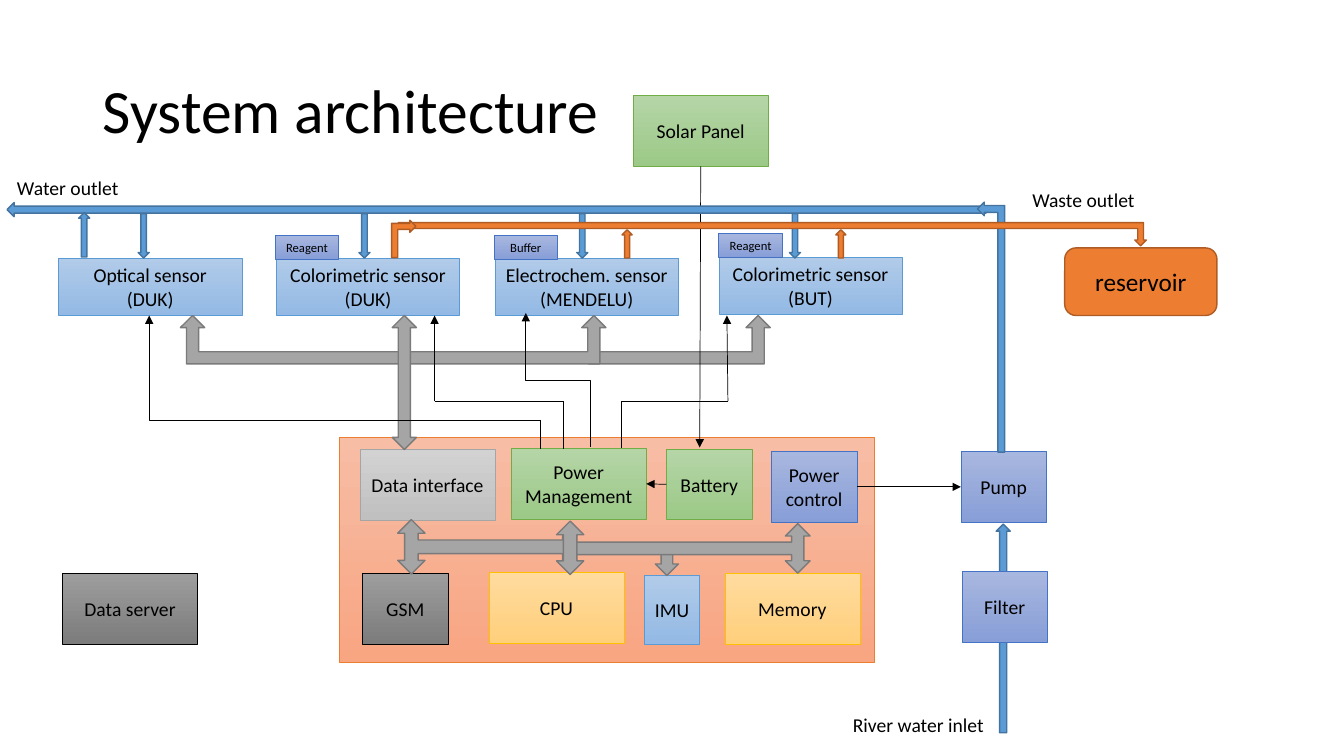
from dataclasses import dataclass

from lxml import etree
from pptx import Presentation
from pptx.dml.color import RGBColor
from pptx.enum.shapes import MSO_CONNECTOR, MSO_SHAPE
from pptx.enum.text import MSO_ANCHOR, PP_ALIGN
from pptx.oxml.ns import qn
from pptx.util import Inches, Pt

RECT, ROUNDED = MSO_SHAPE.RECTANGLE, MSO_SHAPE.ROUNDED_RECTANGLE
UP, DOWN, RIGHT = MSO_SHAPE.UP_ARROW, MSO_SHAPE.DOWN_ARROW, MSO_SHAPE.RIGHT_ARROW
UP_DOWN, BENT_UP = MSO_SHAPE.UP_DOWN_ARROW, MSO_SHAPE.BENT_UP_ARROW
THREE_WAY = MSO_SHAPE.LEFT_RIGHT_UP_ARROW
STRAIGHT, ELBOW = MSO_CONNECTOR.STRAIGHT, MSO_CONNECTOR.ELBOW
LEFT, CENTER = PP_ALIGN.LEFT, PP_ALIGN.CENTER
TOP, MIDDLE = MSO_ANCHOR.TOP, MSO_ANCHOR.MIDDLE
SIDE_LEFT, SIDE_BOTTOM, SIDE_RIGHT = 1, 2, 3
FONT, BLACK = "Calibri", "000000"


@dataclass
class Style:
    fill: str
    line: str
    fill_end: str = ""
    line_width: float = 0.5


@dataclass
class Box:
    text: str
    left: float
    top: float
    width: float
    height: float
    style: Style
    size: int = 14
    kind: int = RECT


@dataclass
class Arrow:
    kind: int
    left: float
    top: float
    width: float
    height: float
    style: Style
    rotation: int = 0
    flip: str = ""


@dataclass
class Wire:
    x1: float
    y1: float
    x2: float
    y2: float
    head: bool = False
    start: tuple = ()
    end: tuple = ()


SENSOR = Style("B1CBE9", "5B9BD5", "93B9E4")
BOARD = Style("F7BDA5", "ED7D31", "F8A582")
GREEN = Style("B5D5A7", "70AD47", "9CC987")
YELLOW = Style("FFDB9E", "FFC000", "FFD07C")
SILVER = Style("D2D2D2", "A5A5A5", "C0C0C0")
INDIGO = Style("A8B7DF", "4472C4", "889ED7")
DARK = Style("9D9D9D", BLACK, "7C7C7C")
DATA = Style("A5A5A5", "7A7A7A", line_width=1)
WATER = Style("5B9BD5", "43739E", line_width=1)
WASTE = Style("ED7D31", "AF5C24", line_width=1)

BOXES = [
    Box("", 3.37, 4.34, 5.3, 2.23, BOARD),
    # Sensors and their supplies
    Box("Optical sensor\n(DUK)", 0.58, 2.56, 1.82, 0.57, SENSOR),
    Box("Colorimetric sensor\n(DUK)", 2.74, 2.56, 1.82, 0.57, SENSOR),
    Box("Electrochem. sensor\n(MENDELU)", 4.91, 2.56, 1.82, 0.57, SENSOR),
    Box("Colorimetric sensor\n(BUT)", 7.13, 2.55, 1.82, 0.57, SENSOR),
    Box("Reagent", 2.73, 2.34, 0.63, 0.23, INDIGO, 9),
    Box("Buffer", 4.9, 2.34, 0.63, 0.23, INDIGO, 9),
    Box("Reagent", 7.13, 2.32, 0.63, 0.23, INDIGO, 9),
    # Controller board
    Box("Data interface", 3.57, 4.46, 1.34, 0.7, SILVER),
    Box("Power Management", 5.07, 4.45, 1.34, 0.7, GREEN),
    Box("Battery", 6.61, 4.46, 0.85, 0.69, GREEN),
    Box("Power control", 7.65, 4.48, 0.85, 0.7, INDIGO),
    Box("GSM", 3.59, 5.69, 0.86, 0.7, DARK),
    Box("CPU", 4.85, 5.68, 1.34, 0.7, YELLOW),
    Box("IMU", 6.39, 5.71, 0.55, 0.68, SENSOR),
    Box("Memory", 7.19, 5.69, 1.34, 0.7, YELLOW),
    # Surroundings
    Box("Solar Panel", 6.28, 0.95, 1.34, 0.7, GREEN),
    Box("Data server", 0.62, 5.69, 1.34, 0.7, DARK),
    Box("Pump", 9.53, 4.48, 0.85, 0.7, INDIGO),
    Box("Filter", 9.54, 5.67, 0.85, 0.7, INDIGO),
    Box("reservoir", 10.56, 2.46, 1.51, 0.67, WASTE, 18, ROUNDED),
]
INTAKE = Arrow(UP, 9.88, 5.2, 0.14, 2.07, WATER)
SENSOR_BUS = [
    Arrow(BENT_UP, 5.84, 3.13, 1.8, 0.48, DATA),
    Arrow(BENT_UP, 4.01, 3.13, 2, 0.48, DATA),
    Arrow(BENT_UP, 1.79, 3.13, 2.23, 0.48, DATA, flip="H"),
    Arrow(UP_DOWN, 3.89, 3.13, 0.24, 1.33, DATA),
]
PIPES = [
    Arrow(RIGHT, 0.07, 2.01, 9.71, 0.14, WATER, flip="H"),
    Arrow(BENT_UP, 8.59, 3.11, 2.48, 0.27, WATER, 270),
    *[Arrow(DOWN, x, 2.12, 0.11, 0.44, WATER) for x in (1.37, 3.56, 5.72, 7.83)],
    Arrow(DOWN, 0.78, 2.11, 0.11, 0.44, WATER, flip="V"),
    Arrow(BENT_UP, 3.95, 2.21, 7.42, 0.23, WASTE, flip="V"),
    *[Arrow(UP, x, 2.28, 0.1, 0.28, WASTE) for x in (6.17, 8.29)],
    Arrow(BENT_UP, 3.82, 2.25, 0.37, 0.24, WASTE, 90, "H"),
]
BOARD_BUS = [
    Arrow(DOWN, 6.5, 5.47, 0.23, 0.24, DATA),
    Arrow(THREE_WAY, 6.57, 4.22, 0.49, 2.44, DATA, 90, "V"),
    Arrow(THREE_WAY, 4.56, 4.54, 0.54, 1.77, DATA, 90),
    Arrow(UP_DOWN, 5.52, 5.17, 0.27, 0.53, DATA),
]
WIRES = [
    Wire(5.36, 4.17, 5.36, 4.45),
    Wire(4.31, 3.98, 4.31, 3.13, True),
    Wire(4.31, 3.98, 5.59, 3.98),
    Wire(5.59, 3.98, 5.59, 4.45),
    Wire(7.22, 3.98, 7.21, 3.13, True),
    Wire(7.22, 3.98, 6.16, 3.98),
    Wire(6.16, 3.98, 6.16, 4.44),
    Wire(6.94, 1.66, 6.94, 4.44, True, ("Solar Panel", SIDE_BOTTOM)),
    Wire(6.61, 4.81, 6.41, 4.8, True, ("Battery", SIDE_LEFT), ("Power Management", SIDE_RIGHT)),
    Wire(8.49, 4.83, 9.53, 4.83, True, ("Power control", SIDE_RIGHT), ("Pump", SIDE_LEFT)),
]
LABELS = [("River water inlet", 8.36, 7.02), ("Water outlet", 0.07, 1.7), ("Waste outlet", 10.14, 1.82)]


def rgb(color: str) -> RGBColor:
    return RGBColor.from_string(color)


def write(shape, text: str, size: int, align: int, anchor: int, margin: float = 0.1) -> None:
    frame = shape.text_frame
    frame.text = text
    frame.word_wrap = True
    frame.vertical_anchor = anchor
    frame.margin_left = frame.margin_right = Inches(margin)
    for paragraph in frame.paragraphs:
        paragraph.alignment = align
        for run in paragraph.runs:
            run.font.name, run.font.size = FONT, Pt(size)
            run.font.color.rgb = rgb(BLACK)


def draw_shape(slide, item: Box | Arrow):
    shape = slide.shapes.add_shape(
        item.kind, *map(Inches, (item.left, item.top, item.width, item.height)))
    style = item.style
    shape.shadow.inherit = False
    if style.fill_end:
        shape.fill.gradient()
        shape.fill.gradient_angle = 270
        for stop, color in zip(shape.fill.gradient_stops, (style.fill, style.fill_end)):
            stop.color.rgb = rgb(color)
    else:
        shape.fill.solid()
        shape.fill.fore_color.rgb = rgb(style.fill)
    shape.line.color.rgb = rgb(style.line)
    shape.line.width = Pt(style.line_width)
    return shape


def draw_box(slide, box: Box):
    shape = draw_shape(slide, box)
    if box.text:
        write(shape, box.text, box.size, CENTER, MIDDLE, 0.05)
    return shape


def draw_arrow(slide, arrow: Arrow) -> None:
    shape = draw_shape(slide, arrow)
    shape.rotation = arrow.rotation
    if arrow.flip:
        shape._element.spPr.find(qn("a:xfrm")).set("flip" + arrow.flip, "1")


def draw_wire(slide, wire: Wire, boxes: dict, kind: int = STRAIGHT):
    line = slide.shapes.add_connector(kind, *map(Inches, (wire.x1, wire.y1, wire.x2, wire.y2)))
    if wire.start:
        line.begin_connect(boxes[wire.start[0]], wire.start[1])
    if wire.end:
        line.end_connect(boxes[wire.end[0]], wire.end[1])
    line.line.color.rgb = rgb(BLACK)
    line.line.width = Pt(0.5)
    if wire.head:
        etree.SubElement(line.line._get_or_add_ln(), qn("a:tailEnd"), type="triangle")
    etree.SubElement(line._element.spPr, qn("a:effectLst"))
    return line


def draw_elbow(slide, frame: Wire, preset: str, rotation: int, flip: str = "") -> None:
    properties = draw_wire(slide, frame, {}, ELBOW)._element.spPr
    properties.find(qn("a:prstGeom")).set("prst", preset)
    transform = properties.find(qn("a:xfrm"))
    transform.set("rot", str(rotation * 60000))
    if flip:
        transform.set("flip" + flip, "1")


def main() -> None:
    deck = Presentation()
    deck.slide_width, deck.slide_height = Inches(13.33), Inches(7.5)
    slide = deck.slides.add_slide(deck.slide_layouts[5])

    # Title
    title = slide.shapes.title
    title.left, title.top, title.width, title.height = map(Inches, (0.92, 0.4, 11.5, 1.45))
    write(title, "System architecture", 44, LEFT, MIDDLE)
    title.text_frame.paragraphs[0].line_spacing = 0.9

    # Boxes, with the river intake running behind the filter
    draw_arrow(slide, INTAKE)
    boxes = {box.text: draw_box(slide, box) for box in BOXES}

    # Data bus and power wires
    for arrow in SENSOR_BUS:
        draw_arrow(slide, arrow)
    draw_elbow(slide, Wire(1.48, 3.13, 5.36, 4.17, True), "bentConnector2", 180)
    draw_elbow(slide, Wire(4.87, 3.45, 6.2, 4.09, True), "bentConnector3", 270, "V")
    for wire in WIRES:
        draw_wire(slide, wire, boxes)

    # Water and waste pipes, then the bus on the board
    for arrow in PIPES + BOARD_BUS:
        draw_arrow(slide, arrow)

    # Pipe labels
    for text, left, top in LABELS:
        label = slide.shapes.add_textbox(*map(Inches, (left, top, 1.52, 0.34)))
        write(label, text, 14, LEFT, TOP)

    deck.save("out.pptx")


if __name__ == "__main__":
    main()
